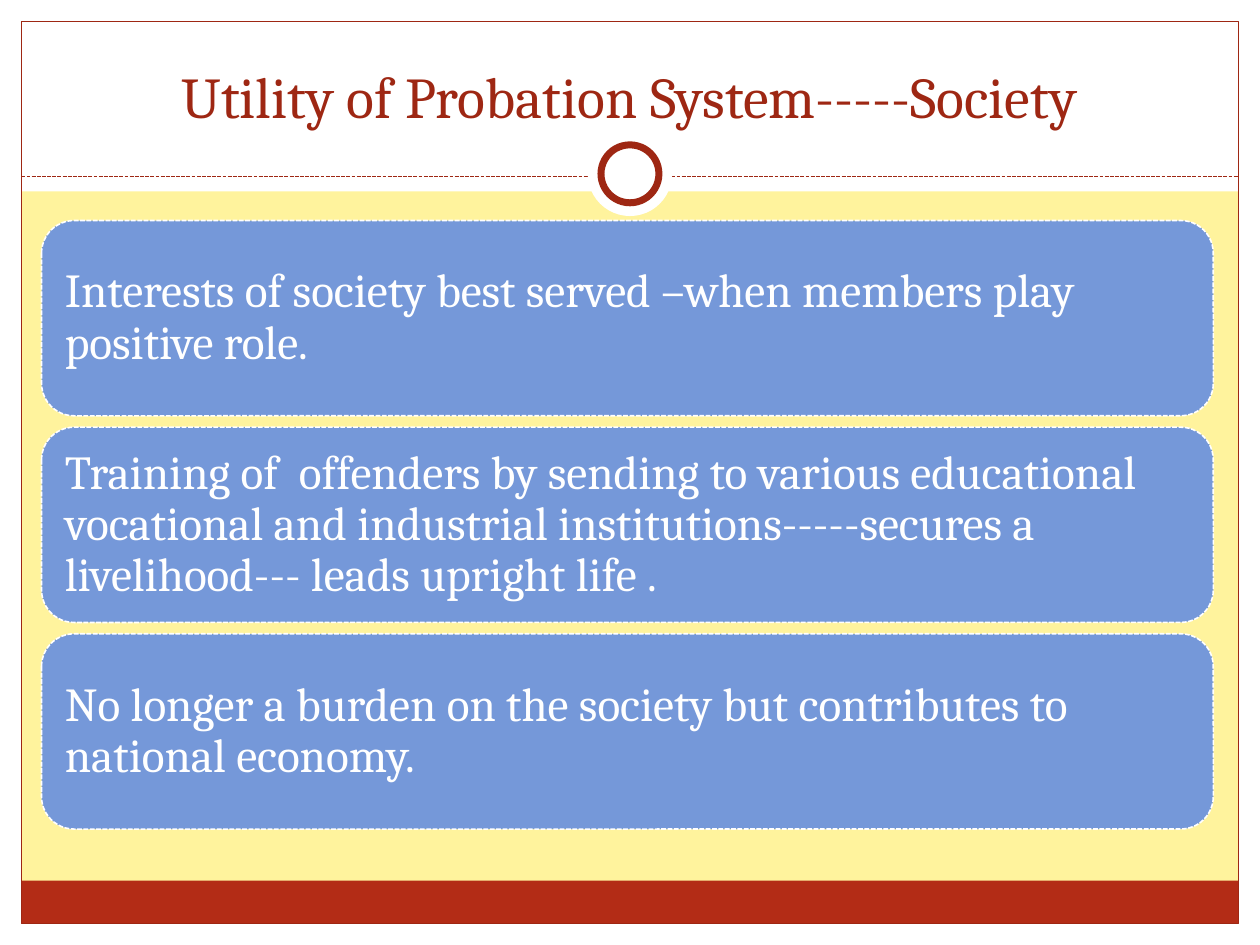
from dataclasses import dataclass

from lxml import etree
from pptx import Presentation
from pptx.dml.color import RGBColor
from pptx.enum.dml import MSO_LINE as Dash
from pptx.enum.shapes import MSO_CONNECTOR as Wire, MSO_SHAPE as Kind
from pptx.enum.text import MSO_ANCHOR as Anchor, PP_ALIGN as Align
from pptx.oxml.ns import qn
from pptx.util import Inches, Pt


@dataclass(frozen=True)
class Theme:
    font: str = "Cambria"
    paper: str = "FFF39D"
    white: str = "FFFFFF"
    red: str = "9E2713"
    band: str = "B32C16"
    card: str = "7598D9"
    title: int = 33
    body: int = 27


class Deck:
    def __init__(self, theme, wide, high):
        self.theme = theme
        self.prs = Presentation()
        self.prs.slide_width = Inches(wide)
        self.prs.slide_height = Inches(high)
        self.slide = self.prs.slides.add_slide(self.prs.slide_layouts[6])
        fill = self.slide.background.fill
        fill.solid()
        fill.fore_color.rgb = RGBColor.from_string(theme.paper)

    def stroke(self, line, color, width, dash=None):
        line.color.rgb = RGBColor.from_string(color)
        line.width = Pt(width)
        if dash:
            line.dash_style = dash

    def shape(self, kind, box, fill=None, line=None, width=0.75, dash=None):
        item = self.slide.shapes.add_shape(kind, *map(Inches, box))
        item.shadow.inherit = False
        if fill:
            item.fill.solid()
            item.fill.fore_color.rgb = RGBColor.from_string(fill)
        else:
            item.fill.background()
        if line:
            self.stroke(item.line, line, width, dash)
        else:
            item.line.fill.background()
        return item

    def rule(self, left, right, y):
        wire = self.slide.shapes.add_connector(
            Wire.STRAIGHT, Inches(left), Inches(y), Inches(right), Inches(y))
        self.stroke(wire.line, self.theme.red, 0.75, Dash.SQUARE_DOT)
        etree.SubElement(wire._element.spPr, qn("a:effectLst"))

    def label(self, frame, text, size, color, align, anchor):
        frame.word_wrap = True
        frame.vertical_anchor = anchor
        frame.text = text
        para = frame.paragraphs[0]
        para.alignment = align
        font = para.runs[0].font
        font.name = self.theme.font
        font.size = Pt(size)
        font.color.rgb = RGBColor.from_string(color)
        return para

    def title(self, box, text):
        item = self.slide.shapes.add_textbox(*map(Inches, box))
        self.label(item.text_frame, text, self.theme.title, self.theme.red,
                   Align.CENTER, Anchor.BOTTOM)

    def card(self, box, text):
        theme = self.theme
        item = self.shape(Kind.ROUNDED_RECTANGLE, box, theme.card,
                          theme.white, 0.9, Dash.SQUARE_DOT)
        frame = item.text_frame
        frame.margin_left = frame.margin_right = Inches(0.11)
        frame.margin_top = frame.margin_bottom = Inches(0.11)
        para = self.label(frame, text, theme.body, theme.white,
                          Align.LEFT, Anchor.MIDDLE)
        para.line_spacing = 0.9


def main():
    wide, high, edge = 10, 7.5, 0.17
    theme = Theme()
    deck = Deck(theme, wide, high)

    # White margins and header
    for box in ((0, high - edge, wide, edge), (0, 0, wide, 1.52),
                (0, 0, edge, high), (wide - edge, 0, edge, high)):
        deck.shape(Kind.RECTANGLE, box, theme.white)

    # Footer band, frame and dashed rule
    inner = wide - 2 * edge
    deck.shape(Kind.RECTANGLE, (edge, 6.99, inner, 0.34), theme.band)
    deck.shape(Kind.RECTANGLE, (edge, edge, inner, high - 2 * edge),
               line=theme.red)
    deck.rule(edge, wide - edge, 1.4)

    # Ring on the rule
    for size, line in ((0.67, None), (0.46, theme.red)):
        box = (wide / 2 - size / 2, 1.38 - size / 2, size, size)
        deck.shape(Kind.OVAL, box, theme.white, line, 4)

    # Title
    deck.title((0.33, 0.25, 9.33, 0.83),
               "Utility of Probation System-----Society")

    # Stacked cards
    points = (
        "Interests of society best served –when members play positive role.",
        "Training of  offenders by sending to various educational vocational "
        "and industrial institutions-----secures a livelihood--- leads "
        "upright life .",
        "No longer a burden on the society but contributes to national "
        "economy.",
    )
    for row, text in enumerate(points):
        deck.card((0.33, 1.75 + 1.64 * row, 9.3, 1.55), text)

    deck.prs.save("out.pptx")


if __name__ == "__main__":
    main()
